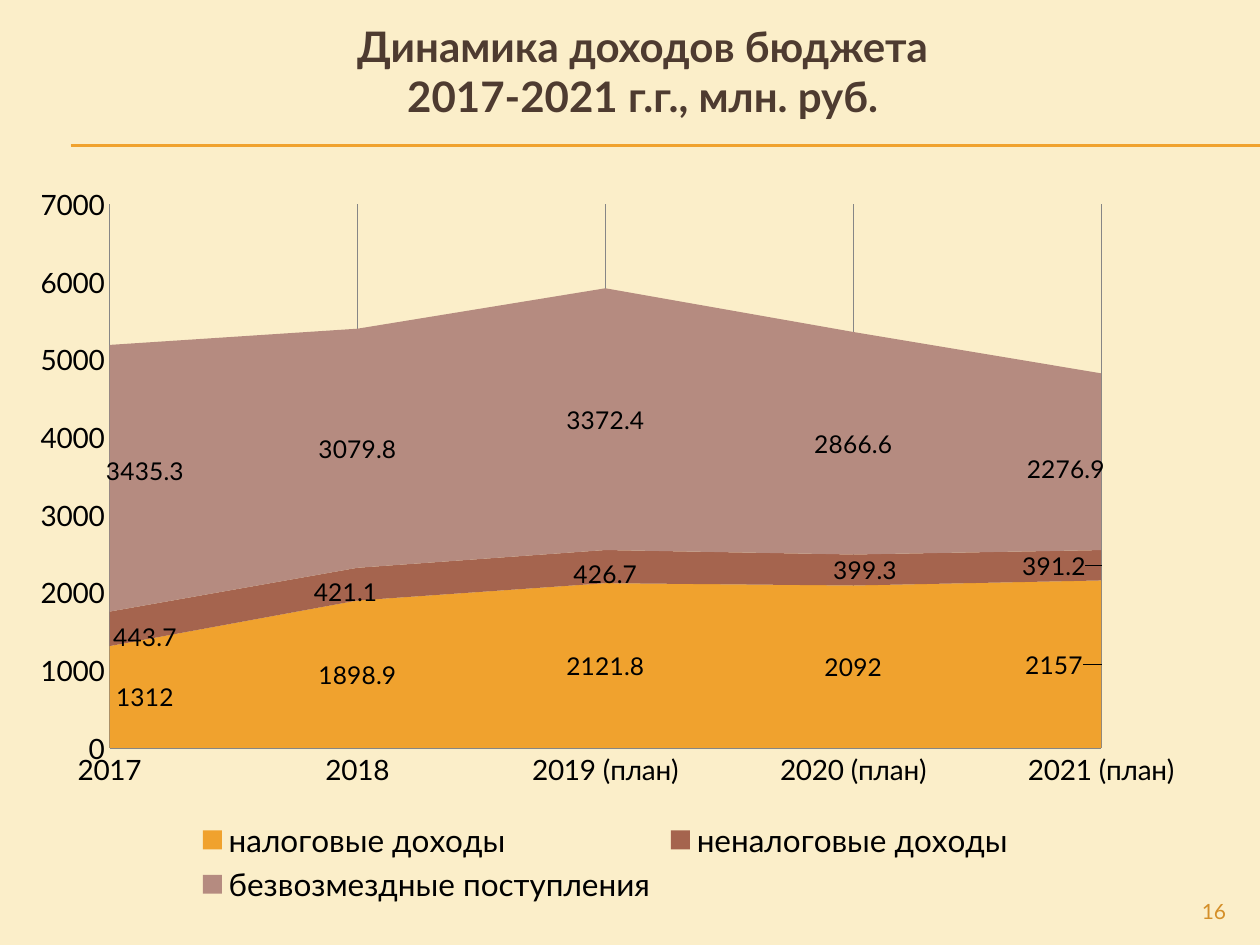
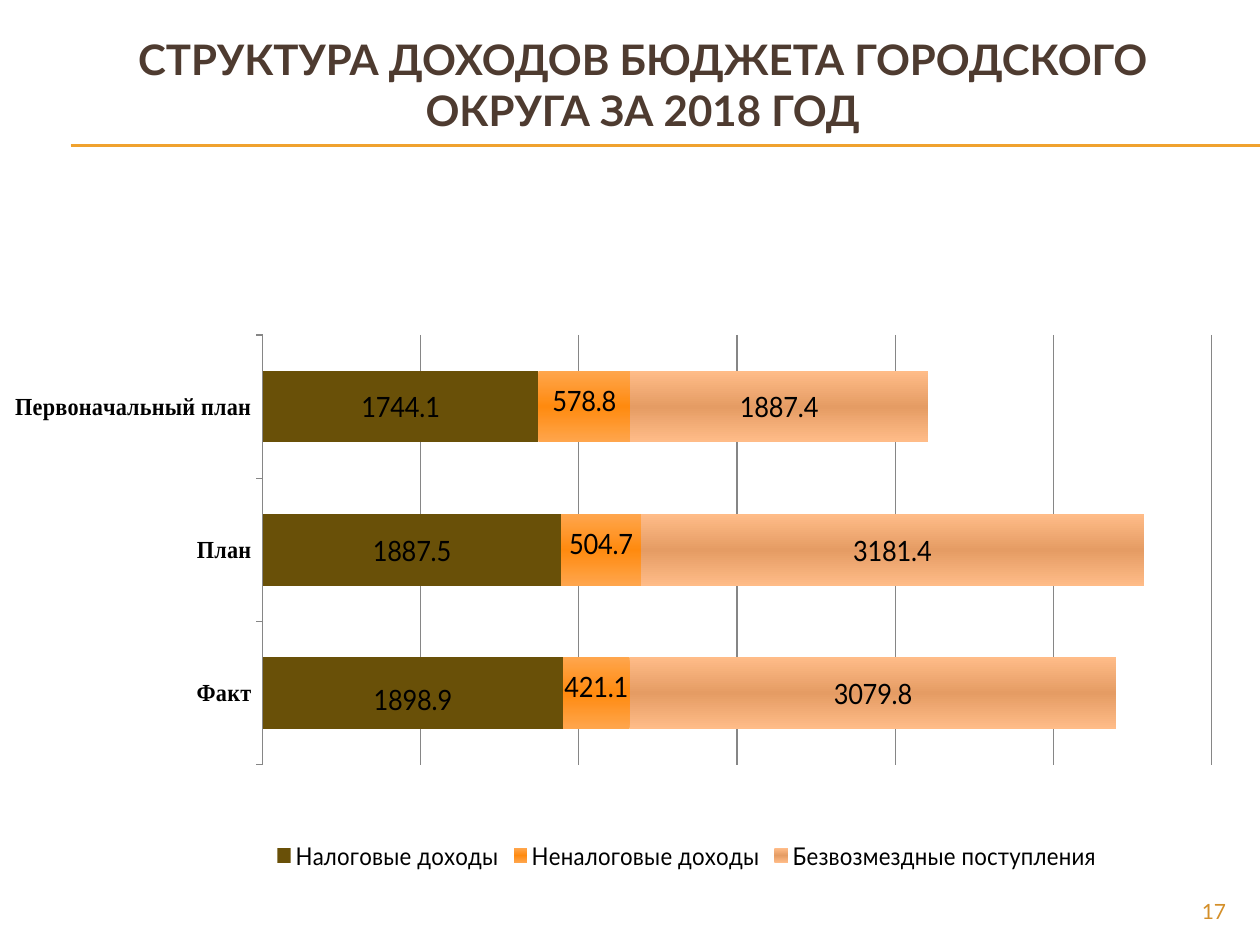
from lxml import etree
from pptx import Presentation
from pptx.chart.data import CategoryChartData
from pptx.dml.color import RGBColor
from pptx.enum.chart import XL_CHART_TYPE, XL_LEGEND_POSITION, XL_TICK_MARK
from pptx.enum.shapes import MSO_CONNECTOR
from pptx.enum.text import MSO_ANCHOR, MSO_AUTO_SIZE, PP_ALIGN
from pptx.oxml import parse_xml
from pptx.oxml.ns import qn
from pptx.util import Inches, Pt

AREA, BAR = XL_CHART_TYPE.AREA_STACKED, XL_CHART_TYPE.BAR_STACKED
NO_TICK, OUTER_TICK = XL_TICK_MARK.NONE, XL_TICK_MARK.OUTSIDE
CENTER, RIGHT = PP_ALIGN.CENTER, PP_ALIGN.RIGHT
FONT = "Lato"
ORANGE, BROWN, NUMBER_COLOR = "F0A22E", "4E3B30", "D48F29"
BLACK, GRID = "000000", "868686"
CHART_NS = "http://schemas.openxmlformats.org/drawingml/2006/chart"
DRAWING_NS = "http://schemas.openxmlformats.org/drawingml/2006/main"


def format_text(target, text=None, *, size, color=BLACK, bold=False,
                name=FONT, align=None):
    """Format a chart font, or fill a text frame when text is given."""
    fonts = [target]
    if text is not None:
        target.text = text
        paragraph = target.paragraphs[0]
        paragraph.alignment = align
        fonts = [run.font for run in paragraph.runs]
    for font in fonts:
        font.size, font.bold, font.name = Pt(size), bold, name
        font.color.rgb = RGBColor.from_string(color)


def add_layout(parent, index, target=None, **values):
    """Insert a manual chart layout as the child at the given index."""
    modes = {"layoutTarget": target, "xMode": "edge", "yMode": "edge"} if target else {}
    parts = "".join(f'<c:{key} val="{value}"/>' for key, value in {**modes, **values}.items())
    parent.insert(index, parse_xml(
        f'<c:layout xmlns:c="{CHART_NS}"><c:manualLayout>{parts}</c:manualLayout></c:layout>'))


# Series: name, values, colours (edge and middle for a gradient),
# label offsets by point as fractions of the chart size
slides = [
    dict(
        number="16", background="FBEEC9", title_top=0.29, title_bottom_margin=0.43,
        title="Динамика доходов бюджета\v2017-2021 г.г., млн. руб.",
        kind=AREA, box=(0.12, 1.39, 9.37, 5.83), plot=(0.08, 0.04, 0.84, 0.74),
        categories=["2017", "2018", "2019 (план)", "2020 (план)", "2021 (план)"],
        label_size=14, legend_size=18, maximum=7000,
        category_font=dict(size=16), category_tick=NO_TICK,
        series=[
            ("налоговые доходы", [1312, 1898.9, 2121.8, 2092, 2157], [ORANGE],
             {0: (0.03, 0), 4: (-0.04, 0)}),
            ("неналоговые доходы", [443.7, 421.1, 426.7, 399.3, 391.2], ["A5644E"],
             {0: (0.03, 0.01), 1: (-0.01, 0.01), 2: (0, 0.01), 3: (0.01, 0), 4: (-0.04, 0)}),
            ("безвозмездные поступления", [3435.3, 3079.8, 3372.4, 2866.6, 2276.9], ["B58B80"],
             {0: (0.03, -0.01), 4: (-0.03, 0.01)}),
        ]),
    dict(
        number="17", background="FFFFFF", title_top=0.21, title_bottom_margin=0.05,
        title="СТРУКТУРА ДОХОДОВ БЮДЖЕТА ГОРОДСКОГО ОКРУГА ЗА 2018 ГОД",
        kind=BAR, box=(0.12, 1.78, 9.76, 5.17), plot=(0.12, 0.17, 0.85, 0.66),
        categories=["Факт", "План", "Первоначальный план"],
        label_size=16, legend_size=14, maximum=6000,
        category_font=dict(size=14, bold=True, name="Times New Roman"),
        category_tick=OUTER_TICK,
        series=[
            ("Налоговые доходы", [1898.9, 1887.5, 1744.1], ["695008"], {0: (0, 0.01)}),
            ("Неналоговые доходы", [421.1, 504.7, 578.8], ["FFA64D", "FF8A0F"],
             {0: (0, -0.01), 1: (0, -0.01), 2: (0, -0.01)}),
            ("Безвозмездные поступления", [3079.8, 3181.4, 1887.4], ["FFBC88", "E59C64"], {}),
        ]),
]

presentation = Presentation()
presentation.slide_width, presentation.slide_height = Inches(10), Inches(7.5)

for content in slides:
    slide = presentation.slides.add_slide(presentation.slide_layouts[5])
    background = slide.background.fill
    background.solid()
    background.fore_color.rgb = RGBColor.from_string(content["background"])

    for line_y in (1.15, 1.16):
        rule = slide.shapes.add_connector(
            MSO_CONNECTOR.STRAIGHT, Inches(0.56), Inches(line_y), Inches(10), Inches(line_y))
        rule.line.color.rgb = RGBColor.from_string(ORANGE)
        rule.line.width = Pt(0.75)
        etree.SubElement(rule._element.spPr, qn("a:effectLst"))

    title = slide.shapes.title
    title.left, title.top = Inches(0.35), Inches(content["title_top"])
    title.width, title.height = Inches(9.5), Inches(0.92)
    title_frame = title.text_frame
    title_frame.auto_size = MSO_AUTO_SIZE.NONE
    title_frame.word_wrap = True
    title_frame.vertical_anchor = MSO_ANCHOR.MIDDLE
    title_frame.margin_bottom = Inches(content["title_bottom_margin"])
    format_text(title_frame, content["title"], size=24, color=BROWN, bold=True, align=CENTER)

    number = slide.shapes.add_textbox(Inches(9), Inches(7.08), Inches(0.83), Inches(0.27))
    number.text_frame.word_wrap = True
    format_text(number.text_frame, content["number"], size=12, color=NUMBER_COLOR, align=RIGHT)

    chart_data = CategoryChartData()
    chart_data.categories = content["categories"]
    for name, values, _, _ in content["series"]:
        chart_data.add_series(name, values)
    box = [Inches(length) for length in content["box"]]
    chart = slide.shapes.add_chart(content["kind"], *box, chart_data).chart
    chart.has_title = False
    format_text(chart.font, size=18)
    chart.has_legend = True
    chart.legend.position = XL_LEGEND_POSITION.BOTTOM
    chart.legend.include_in_layout = False
    format_text(chart.legend.font, size=content["legend_size"])

    plot_area = chart._chartSpace.chart.plotArea
    for layout in plot_area.findall(qn("c:layout")):
        plot_area.remove(layout)
    add_layout(plot_area, 0, "inner", **dict(zip("xywh", content["plot"])))

    category_axis, value_axis = chart.category_axis, chart.value_axis
    for axis in (category_axis, value_axis):
        axis.format.line.color.rgb = RGBColor.from_string(GRID)
        axis.minor_tick_mark = NO_TICK
    format_text(category_axis.tick_labels.font, **content["category_font"])
    category_axis.major_tick_mark = content["category_tick"]
    format_text(value_axis.tick_labels.font, size=16)
    value_axis.major_tick_mark = NO_TICK
    value_axis.minimum_scale, value_axis.maximum_scale = 0, content["maximum"]
    value_axis.major_unit = 1000

    plot = chart.plots[0]
    plot.vary_by_categories = False
    if content["kind"] == BAR:
        plot.gap_width, plot.overlap = 100, 100
        value_axis.visible = False
        grid_axis, plain_axis = value_axis, category_axis
    else:
        value_axis._element.find(qn("c:crossBetween")).set("val", "midCat")
        grid_axis, plain_axis = category_axis, value_axis
    plain_axis.has_major_gridlines = False
    grid_axis.has_major_gridlines = True
    grid_axis.major_gridlines.format.line.color.rgb = RGBColor.from_string(GRID)

    for series, (_, _, colors, offsets) in zip(plot.series, content["series"]):
        fill = series.format.fill
        fill.solid()
        fill.fore_color.rgb = RGBColor.from_string(colors[0])
        if len(colors) == 2:
            edge, middle = colors
            stops = "".join(
                f'<a:gs pos="{position}"><a:srgbClr val="{color}"/></a:gs>'
                for position, color in ((0, edge), (50000, middle), (100000, edge)))
            properties = series._element.spPr
            properties.replace(properties.find(qn("a:solidFill")), parse_xml(
                f'<a:gradFill xmlns:a="{DRAWING_NS}"><a:gsLst>{stops}</a:gsLst>'
                '<a:lin ang="5400000"/></a:gradFill>'))
        series.data_labels.show_value = True
        format_text(series.data_labels.font, size=content["label_size"])
        for index, (shift_x, shift_y) in offsets.items():
            format_text(series.points[index].data_label.font, size=content["label_size"])
            label = series._element.findall(".//" + qn("c:dLbl"))[-1]
            for position in label.findall(qn("c:dLblPos")):
                label.remove(position)
            add_layout(label, 1, x=shift_x, y=shift_y)

presentation.save("out.pptx")
